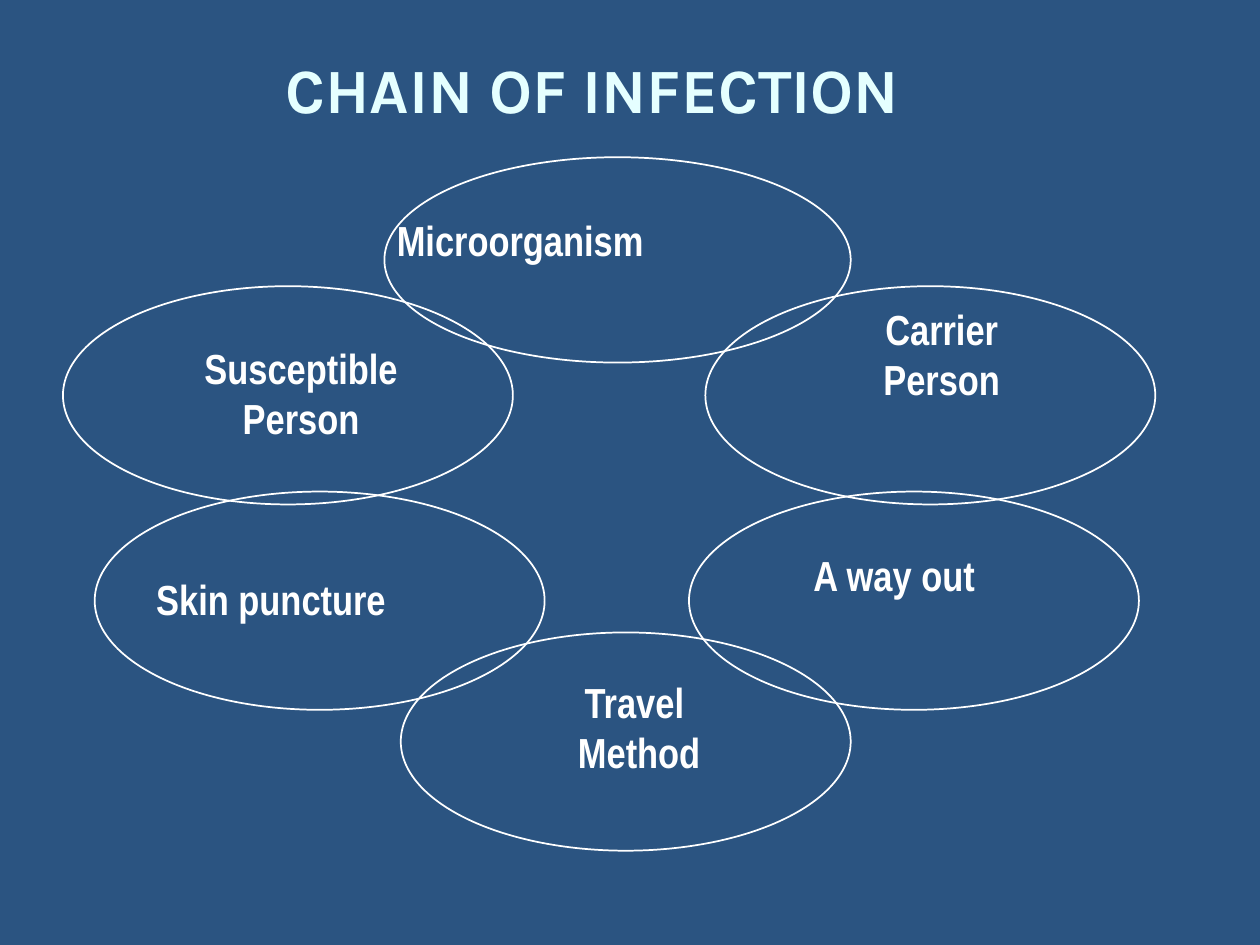
from pptx import Presentation
from pptx.dml.color import RGBColor
from pptx.enum.shapes import MSO_SHAPE
from pptx.enum.text import MSO_ANCHOR, MSO_AUTO_SIZE, PP_ALIGN
from pptx.util import Cm, Pt

OVAL = MSO_SHAPE.OVAL
MIDDLE = MSO_ANCHOR.MIDDLE
FIT_SHAPE = MSO_AUTO_SIZE.SHAPE_TO_FIT_TEXT
LEFT, CENTER = PP_ALIGN.LEFT, PP_ALIGN.CENTER

THEME = {
    "background": RGBColor(0x2B, 0x54, 0x81),
    "line": RGBColor(0xFF, 0xFF, 0xFF),
    "line_width": Pt(1),
    "title": {"name": "Karla", "size": Pt(36), "bold": True,
              "color": RGBColor(0xE5, 0xFF, 0xFF)},
    "label": {"name": "Arial Narrow", "size": Pt(24), "bold": True,
              "color": RGBColor(0xFF, 0xFF, 0xFF)},
}

TITLE = "CHAIN OF INFECTION"
TITLE_BOX = (0, 0.84, 23.88, 1.9)

# Oval sizes and positions in centimetres
LINK_SIZE = (9.07, 4.4)
TOP_LINK_SIZE = (9.4, 4.14)
UPPER_ROW, LOWER_ROW = 5.77, 9.91

# Label lines, label box (left, top, width), oval (left, top), oval size
LINKS = [
    (["Microorganism"], (7.75, 4.19, 5.49), (7.75, 3.17), TOP_LINK_SIZE),
    (["Carrier", "Person"], (17.55, 5.99, 2.87), (14.22, UPPER_ROW), LINK_SIZE),
    (["A way out"], (16.15, 10.95, 6.4), (13.89, LOWER_ROW), LINK_SIZE),
    (["Travel ", "Method"], (11.4, 13.51, 2.97), (8.08, 12.75), LINK_SIZE),
    (["Skin puncture"], (2.9, 11.43, 5.13), (1.91, LOWER_ROW), LINK_SIZE),
    (["Susceptible", "Person"], (3.86, 6.78, 4.42), (1.27, UPPER_ROW), LINK_SIZE),
]
LABEL_HEIGHTS = {1: 1.27, 2: 2.29}


def lengths(values):
    return [Cm(value) for value in values]


def format_font(font, style):
    for name, value in style.items():
        if name == "color":
            font.color.rgb = value
        else:
            setattr(font, name, value)


def add_title(slide):
    title = slide.shapes.title
    title.left, title.top, title.width, title.height = lengths(TITLE_BOX)
    frame = title.text_frame
    frame.text = TITLE
    frame.vertical_anchor = MIDDLE
    paragraph = frame.paragraphs[0]
    paragraph.alignment = CENTER
    format_font(paragraph.runs[0].font, THEME["title"])


def add_oval(slide, position, size):
    oval = slide.shapes.add_shape(OVAL, *lengths(position + size))
    oval.shadow.inherit = False
    oval.fill.background()
    oval.line.color.rgb = THEME["line"]
    oval.line.width = THEME["line_width"]


def add_label(slide, lines, box):
    height = LABEL_HEIGHTS[len(lines)]
    frame = slide.shapes.add_textbox(*lengths(box + (height,))).text_frame
    frame.word_wrap = False
    frame.auto_size = FIT_SHAPE
    frame.text = "\n".join(lines)
    for paragraph in frame.paragraphs:
        paragraph.alignment = CENTER if len(lines) > 1 else LEFT
        format_font(paragraph.runs[0].font, THEME["label"])
    return frame


def main():
    presentation = Presentation()
    presentation.slide_width, presentation.slide_height = Cm(25.4), Cm(19.05)
    slide = presentation.slides.add_slide(presentation.slide_layouts[5])
    slide.background.fill.solid()
    slide.background.fill.fore_color.rgb = THEME["background"]

    add_title(slide)
    for lines, label_box, position, size in LINKS:
        add_oval(slide, position, size)
        label = add_label(slide, lines, label_box)
        label.word_wrap = lines == ["A way out"]
    presentation.save("out.pptx")


if __name__ == "__main__":
    main()
